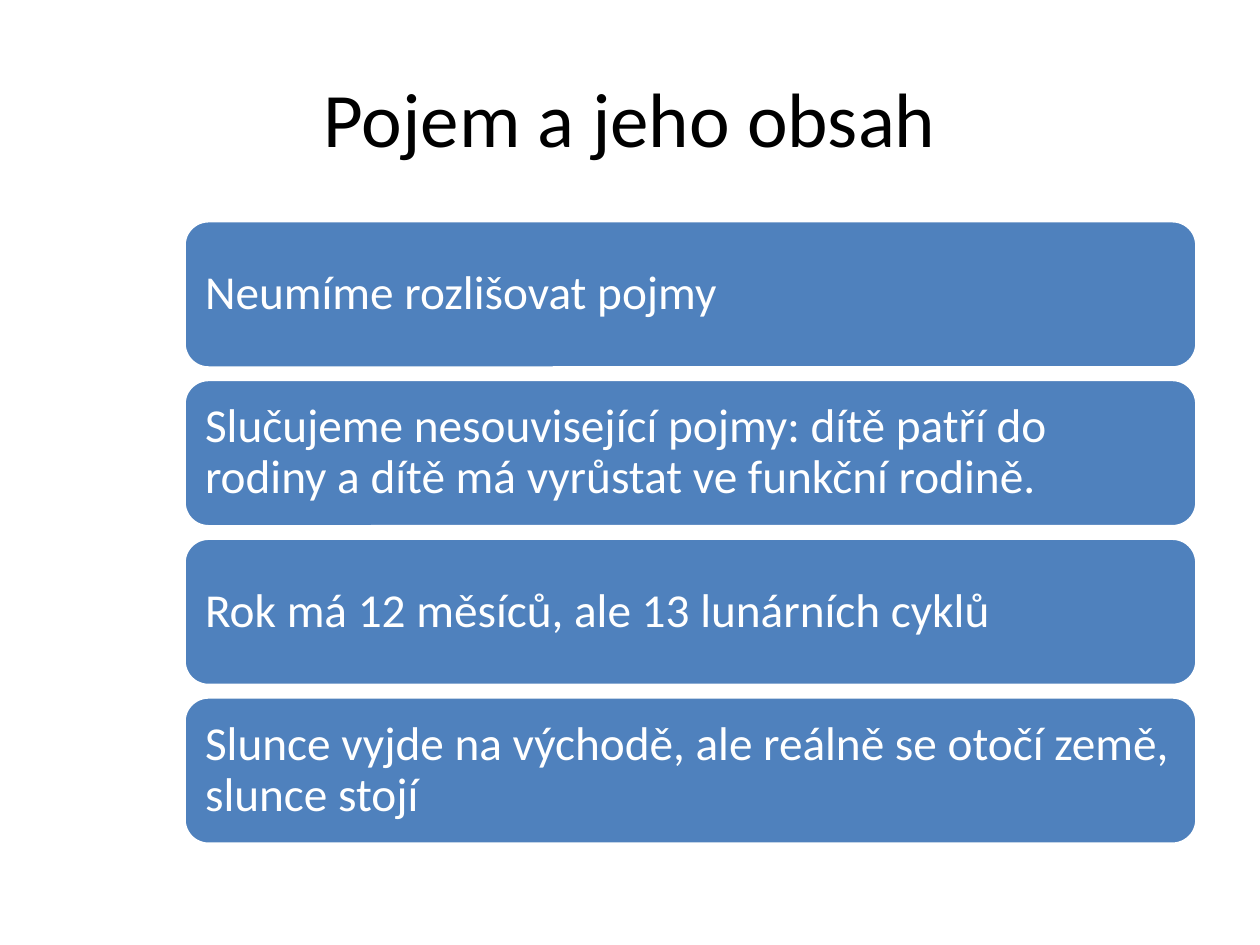
from pptx import Presentation
from pptx.dml.color import RGBColor
from pptx.enum.shapes import MSO_SHAPE as Shape
from pptx.enum.text import MSO_ANCHOR as Anchor, PP_ALIGN as Align
from pptx.util import Cm, Pt

HEADING = "Pojem a jeho obsah"
STATEMENTS = [
    "Neumíme rozlišovat pojmy",
    "Slučujeme nesouvisející pojmy: dítě patří do rodiny a dítě má vyrůstat ve funkční rodině.",
    "Rok má 12 měsíců, ale 13 lunárních cyklů",
    "Slunce vyjde na východě, ale reálně se otočí země, slunce stojí",
]
COLORS = {"heading": "000000", "bar": "4F81BD", "light": "FFFFFF"}
FONT = "Calibri"
BAR_LEFT, BAR_TOP, BAR_WIDTH, BAR_HEIGHT = 3.71, 4.45, 20.42, 2.97
BAR_GAP = 0.23
BAR_INSET = 0.28


def color(name):
    return RGBColor.from_string(COLORS[name])


def write(part, words, size, ink, align):
    frame = part.text_frame
    frame.word_wrap = True
    frame.vertical_anchor = Anchor.MIDDLE
    paragraph = frame.paragraphs[0]
    paragraph.text = words
    paragraph.alignment = align
    paragraph.font.name = FONT
    paragraph.font.size = Pt(size)
    paragraph.font.color.rgb = color(ink)
    return frame, paragraph


def add_bar(slide, row, statement):
    top = BAR_TOP + row * (BAR_HEIGHT + BAR_GAP)
    bar = slide.shapes.add_shape(
        Shape.ROUNDED_RECTANGLE, Cm(BAR_LEFT), Cm(top), Cm(BAR_WIDTH), Cm(BAR_HEIGHT)
    )
    bar.shadow.inherit = False
    bar.fill.solid()
    bar.fill.fore_color.rgb = color("bar")
    bar.line.color.rgb = color("light")
    bar.line.width = Pt(2)
    frame, paragraph = write(bar, statement, 27, "light", Align.LEFT)
    paragraph.line_spacing = 0.9
    frame.margin_left = frame.margin_right = Cm(BAR_INSET)
    frame.margin_top = frame.margin_bottom = Cm(BAR_INSET)


def main():
    deck = Presentation()
    deck.slide_width, deck.slide_height = Cm(25.4), Cm(19.05)
    slide = deck.slides.add_slide(deck.slide_layouts[6])
    heading = slide.shapes.add_textbox(Cm(1.27), Cm(0.76), Cm(22.86), Cm(3.18))
    write(heading, HEADING, 44, "heading", Align.CENTER)
    for row, statement in enumerate(STATEMENTS):
        add_bar(slide, row, statement)
    deck.save("out.pptx")


if __name__ == "__main__":
    main()
